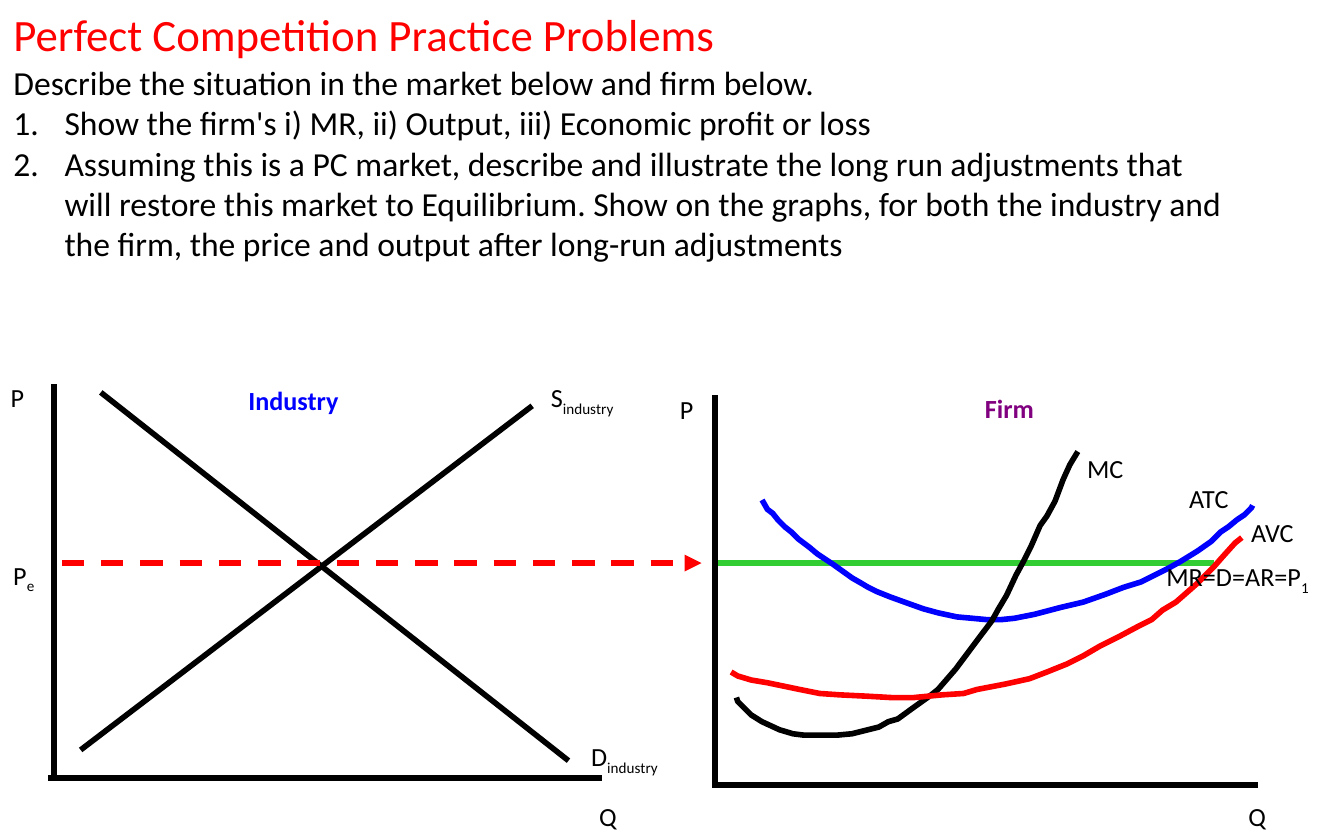
"""Builds a slide of perfect competition problems with industry and firm graphs."""
from lxml.etree import SubElement
from pptx import Presentation
from pptx.dml.color import RGBColor
from pptx.enum.dml import MSO_LINE
from pptx.enum.shapes import MSO_CONNECTOR
from pptx.enum.text import MSO_ANCHOR, MSO_AUTO_SIZE, PP_ALIGN
from pptx.oxml.ns import qn
from pptx.util import Inches, Pt

BLACK = RGBColor(0x00, 0x00, 0x00)
RED = RGBColor(0xFF, 0x00, 0x00)
BLUE = RGBColor(0x00, 0x00, 0xFF)
GREEN = RGBColor(0x32, 0xCD, 0x32)
PURPLE = RGBColor(0x80, 0x00, 0x80)
FONT = "Calibri"
WIDTH, HEIGHT = 100, 62.5
PRICE_ROW = 41.9
LABEL_HEIGHT = 3.4

TITLE = "Perfect Competition Practice Problems"
INTRO = "Describe the situation in the market below and firm below."
TASKS = [
    "Show the firm's i) MR, ii) Output, iii) Economic profit or loss",
    "Assuming this is a PC market, describe and illustrate the long run "
    "adjustments that will restore this market to Equilibrium. Show on the "
    "graphs, for both the industry and the firm, the price and output after "
    "long-run adjustments",
]

STRAIGHT_LINES = [
    ((53.1, PRICE_ROW), (90.3, PRICE_ROW), GREEN),
    ((4, 28.6), (4, 57.9), BLACK),
    ((3.6, 57.9), (44.8, 57.9), BLACK),
    ((7.5, 29.2), (42.3, 56.6), BLACK),
    ((6, 55.8), (39.6, 30.2), BLACK),
    ((53.2, 58.4), (53.2, 29.4), BLACK),
    ((53, 58.4), (93.6, 58.4), BLACK),
]

LABELS = [
    ("P", "", -0.2, 27.9, 4.5),
    ("Q", "", 43.6, 59.1, 5),
    ("S", "industry", 40, 27.9, 10.3),
    ("D", "industry", 43, 54.6, 10.6),
    ("P", "", 49.6, 28.8, 4.5),
    ("Q", "", 91.9, 59.1, 5),
    ("MC", "", 79.9, 33.2, 6.6),
    ("ATC", "", 87.5, 35.4, 7.4),
    ("AVC", "", 92.1, 37.9, 7.9),
]

PRICE_LABELS = [
    ("MR=D=AR=P", "1", 85.8, 41.2, 14.2),
    ("P", "e", 0, 41.1, 5.5),
]

ATC_CURVE = [
    (56.7, 37.2), (57.1, 37.9), (57.5, 38.2), (57.9, 38.7), (58.4, 39.2),
    (58.9, 39.6), (59.4, 40.1), (60.2, 40.7), (60.8, 41.2), (61.4, 41.6),
    (62, 42), (62.7, 42.5), (63.4, 43), (64.1, 43.4), (64.6, 43.7),
    (65.2, 44), (66.2, 44.4), (67.3, 44.8), (68.7, 45.3), (69.8, 45.6),
    (71.2, 45.9), (72.3, 46), (73.4, 46.1), (74.5, 46.1), (75.5, 46),
    (77, 45.7), (78.9, 45.2), (80.6, 44.8), (82.3, 44.2), (83.6, 43.7),
    (84.9, 43.3), (85.9, 42.8), (86.9, 42.3), (87.8, 41.8), (89.1, 41),
    (90.1, 40.3), (90.8, 39.6), (91.4, 39.2), (92, 38.7), (92.6, 38.3),
    (93.1, 37.8), (93.2, 37.6),
]

MC_CURVE = [
    (54.8, 51.9), (54.9, 52.2), (55.5, 52.8), (55.9, 53.2), (56.7, 53.7),
    (58, 54.3), (59, 54.6), (59.8, 54.7), (62.3, 54.7), (63.4, 54.6),
    (65.4, 54.1), (66.1, 53.7), (66.8, 53.5), (67.9, 52.7), (69.3, 51.7),
    (69.8, 51.3), (71.1, 49.8), (72.9, 47.4), (73.8, 46.2), (74.3, 45.3),
    (74.9, 44.3), (75.6, 42.8), (76.2, 41.7), (76.7, 40.7), (77.4, 39.1),
    (77.9, 38.4), (78.5, 37.3), (79.1, 35.7), (79.6, 34.6), (79.9, 34.1),
    (80.2, 33.6),
]

AVC_CURVE = [
    (54.4, 50), (54.9, 50.3), (55.9, 50.6), (57.1, 50.8), (59.5, 51.3),
    (61, 51.6), (62.5, 51.7), (64.5, 51.8), (66.3, 51.9), (68, 51.9),
    (70.1, 51.7), (71.7, 51.6), (72.7, 51.3), (74.8, 50.9), (76.6, 50.5),
    (77.9, 50), (79.4, 49.4), (80.6, 48.8), (81.8, 48.1), (83.2, 47.4),
    (84.7, 46.6), (85.7, 46.1), (86.5, 45.4), (87.5, 44.8), (88.3, 44.1),
    (89.1, 43.4), (89.8, 42.7), (90.3, 42.2), (91, 41.4), (91.9, 40.4),
    (92.4, 40),
]


def grid(*cells):
    """Turn grid counts, a hundred columns to the slide, into lengths."""
    return [Inches(cell / 10) for cell in cells]


def write(paragraph, text, size=14, color=BLACK, bold=False, subscript=False):
    """Add a formatted run of text to a paragraph."""
    run = paragraph.add_run()
    run.text = text
    run.font.name = FONT
    run.font.size = Pt(size)
    run.font.color.rgb = color
    run.font.bold = bold
    if subscript:
        run._r.get_or_add_rPr().set("baseline", "-25000")


def place(placeholder, left, top, width, height):
    """Move a placeholder on the grid and clear its autofit."""
    placeholder.left, placeholder.top, placeholder.width, placeholder.height = grid(
        left, top, width, height)
    frame = placeholder.text_frame
    frame.auto_size = MSO_AUTO_SIZE.NONE
    frame.word_wrap = True
    frame.vertical_anchor = MSO_ANCHOR.TOP
    frame.margin_bottom = 0
    return frame


def format_item(paragraph, numbered):
    """Set the indent and the numbering of a body paragraph."""
    paragraph.alignment = PP_ALIGN.LEFT
    paragraph.space_before = Pt(0)
    properties = paragraph._p.get_or_add_pPr()
    indent = Inches(0.38) if numbered else 0
    properties.set("marL", str(indent))
    properties.set("indent", str(-indent))
    if numbered:
        SubElement(properties, qn("a:buFont"), typeface="+mj-lt")
        SubElement(properties, qn("a:buAutoNum"), type="arabicPeriod")
    else:
        SubElement(properties, qn("a:buNone"))


def add_problem(slide):
    """Fill the title and body placeholders with the problem."""
    heading = place(slide.shapes.title, 0, 0, 92.9, 4.6).paragraphs[0]
    heading.alignment = PP_ALIGN.LEFT
    write(heading, TITLE, size=24, color=RED)
    body = place(slide.placeholders[1], 0, 4.6, 92.9, 15.6)
    body.margin_top = 0
    for index, wording in enumerate([INTRO, *TASKS]):
        item = body.add_paragraph() if index else body.paragraphs[0]
        format_item(item, numbered=index > 0)
        write(item, wording, size=18)


def add_label(slide, text, subscript, left, top, width, **style):
    """Add a graph label with an optional subscript."""
    label = slide.shapes.add_textbox(*grid(left, top, width, LABEL_HEIGHT))
    label.text_frame.word_wrap = True
    paragraph = label.text_frame.paragraphs[0]
    write(paragraph, text, **style)
    if subscript:
        write(paragraph, subscript, subscript=True, **style)


def add_line(slide, start, end, color, arrow=False):
    """Draw a straight line, dashed with an arrowhead if asked."""
    line = slide.shapes.add_connector(MSO_CONNECTOR.STRAIGHT, *grid(*start, *end))
    line.line.color.rgb = color
    line.line.width = Pt(3)
    if arrow:
        line.line.dash_style = MSO_LINE.DASH
        SubElement(line.line._get_or_add_ln(), qn("a:tailEnd"), type="triangle")
    SubElement(line._element.spPr, qn("a:effectLst"))


def add_curve(slide, points, color):
    """Draw an open cost curve through grid points."""
    start, *rest = [grid(*point) for point in points]
    builder = slide.shapes.build_freeform(*start)
    builder.add_line_segments(rest, close=False)
    curve = builder.convert_to_shape()
    curve.shadow.inherit = False
    curve.fill.background()
    curve.line.color.rgb = color
    curve.line.width = Pt(3)


def main():
    """Build and save the slide."""
    deck = Presentation()
    deck.slide_width, deck.slide_height = grid(WIDTH, HEIGHT)
    slide = deck.slides.add_slide(deck.slide_layouts[1])
    add_problem(slide)
    for start, end, color in STRAIGHT_LINES:
        add_line(slide, start, end, color)
    for label in LABELS:
        add_label(slide, *label)
    add_label(slide, "Industry", "", 17.5, 28.1, 12.3, color=BLUE, bold=True)
    add_label(slide, "Firm", "", 72.3, 28.7, 8, color=PURPLE, bold=True)
    for points, color in ((ATC_CURVE, BLUE), (MC_CURVE, BLACK), (AVC_CURVE, RED)):
        add_curve(slide, points, color)
    add_line(slide, (4.6, PRICE_ROW), (52.2, PRICE_ROW), RED, arrow=True)
    for label in PRICE_LABELS:
        add_label(slide, *label)
    deck.save("out.pptx")


if __name__ == "__main__":
    main()
